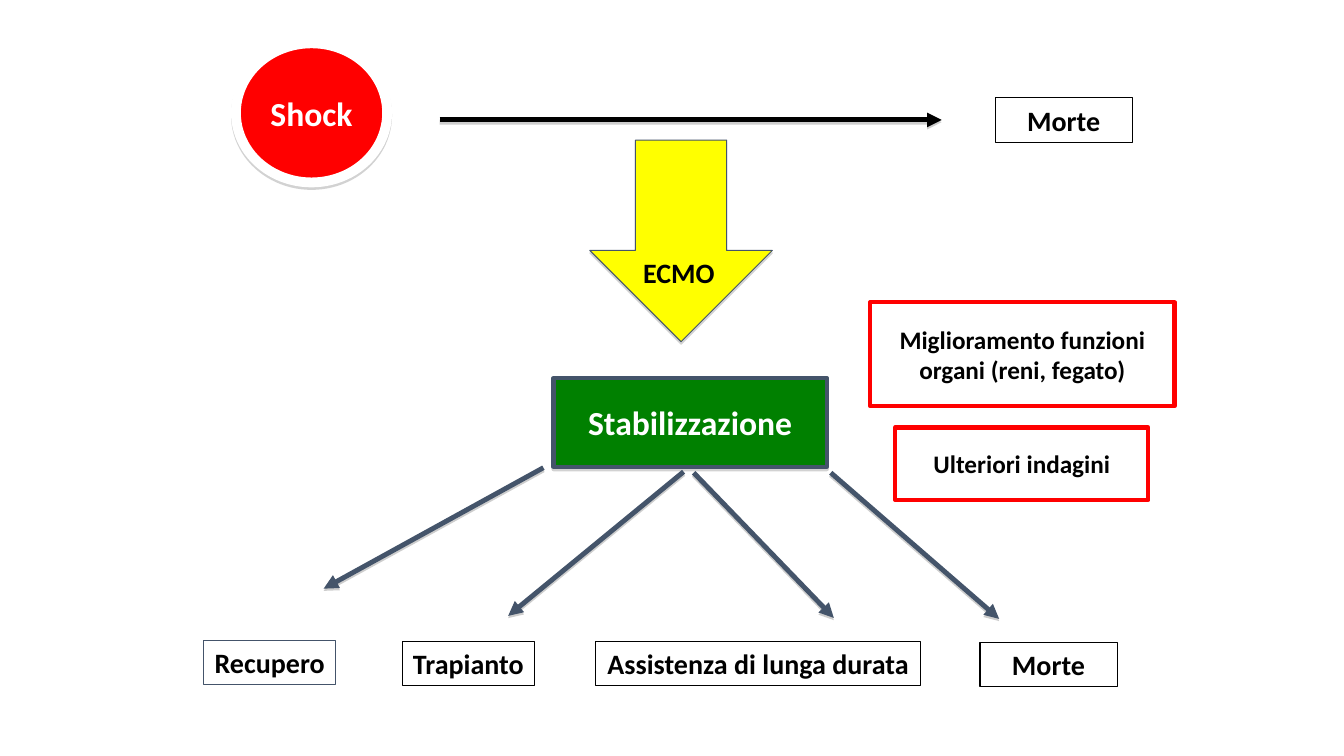
import pptx
import pptx.util
import pptx.dml.color
import pptx.enum.shapes
import pptx.enum.text
import pptx.oxml
import pptx.oxml.ns
from dataclasses import dataclass

PX = 9144
SHAPE = pptx.enum.shapes.MSO_SHAPE
ALIGN = pptx.enum.text.PP_ALIGN


@dataclass(frozen=True)
class Theme:
    font: str = "Calibri"
    black: str = "000000"
    white: str = "FFFFFF"
    red: str = "FF0000"
    yellow: str = "FFFF00"
    green: str = "008000"
    slate: str = "44546A"
    shadow: str = "808080"
    heading: int = 24
    label: int = 20
    note: int = 18
    hairline: float = 0.75
    border: float = 3
    arrow: float = 3.5
    halo: float = 7


THEME = Theme()


def rgb(value):
    return pptx.dml.color.RGBColor.from_string(value)


def px(*lengths):
    return [pptx.util.Emu(length * PX) for length in lengths]


def set_line(line, color, width):
    line.color.rgb = rgb(color)
    line.width = pptx.util.Pt(width)


def add_shadow(effects, distance, opacity):
    effects.append(pptx.oxml.parse_xml(
        f'<a:outerShdw {pptx.oxml.ns.nsdecls("a")} blurRad="0" '
        f'dist="{pptx.util.Pt(distance)}" dir="5400000" rotWithShape="0">'
        f'<a:srgbClr val="{THEME.shadow}"><a:alpha val="{opacity * 1000}"/></a:srgbClr>'
        '</a:outerShdw>'))


def write(shape, text, size, color=THEME.black, align=ALIGN.CENTER, wrap=True):
    frame = shape.text_frame
    frame.text = text
    frame.word_wrap = wrap
    frame.vertical_anchor = pptx.enum.text.MSO_ANCHOR.MIDDLE
    paragraph = frame.paragraphs[0]
    paragraph.alignment = align
    font = paragraph.runs[0].font
    font.name = THEME.font
    font.size = pptx.util.Pt(size)
    font.bold = True
    font.color.rgb = rgb(color)


def add_block(slide, kind, box, fill, line, width, shadow=False):
    block = slide.shapes.add_shape(kind, *px(*box))
    block.shadow.inherit = False
    if fill:
        block.fill.solid()
        block.fill.fore_color.rgb = rgb(fill)
    else:
        block.fill.background()
    set_line(block.line, line, width)
    if shadow:
        add_shadow(block.element.spPr.find(pptx.oxml.ns.qn("a:effectLst")), 1.8, 35)
    return block


def add_arrow(slide, start, end, color):
    arrow = slide.shapes.add_connector(
        pptx.enum.shapes.MSO_CONNECTOR.STRAIGHT, *px(*start, *end))
    set_line(arrow.line, color, THEME.arrow)
    properties = arrow.element.spPr
    line = properties.find(pptx.oxml.ns.qn("a:ln"))
    line.append(pptx.oxml.parse_xml(
        f'<a:tailEnd {pptx.oxml.ns.nsdecls("a")} type="triangle"/>'))
    effects = pptx.oxml.parse_xml(f'<a:effectLst {pptx.oxml.ns.nsdecls("a")}/>')
    properties.append(effects)
    add_shadow(effects, 1.6, 38)


def add_label(slide, text, box, line=THEME.black, wrap=False):
    label = add_block(slide, SHAPE.RECTANGLE, box, None, line, THEME.hairline)
    write(label, text, THEME.label, wrap=wrap)


def add_untreated_course(slide, box):
    left, top, width, height = box
    shock = add_block(slide, SHAPE.OVAL, (left, top, 150, height),
                      THEME.red, THEME.white, THEME.halo, shadow=True)
    write(shock, "Shock", THEME.heading, THEME.white)
    death_left = left + width - 136
    add_label(slide, "Morte", (death_left, top + 54, 136, 44))
    add_arrow(slide, (left + 202, top + 76), (death_left - 53, top + 76), THEME.black)


def add_treatment(slide, box):
    left, top, width, height = box
    add_block(slide, SHAPE.DOWN_ARROW, (left + 36, top, 181, 200),
              THEME.yellow, THEME.slate, THEME.hairline, shadow=True)
    ecmo = slide.shapes.add_textbox(*px(left + 79, top + 109, 99, 44))
    write(ecmo, "ECMO", THEME.label, align=ALIGN.LEFT)
    stabilization = add_block(slide, SHAPE.RECTANGLE, (left, top + height - 88, width, 88),
                              THEME.green, THEME.slate, THEME.border, shadow=True)
    write(stabilization, "Stabilizzazione", THEME.heading, THEME.white)


def add_benefits(slide, box):
    left, top, width, height = box
    benefits = (
        ("Miglioramento funzioni organi (reni, fegato)", (left, top, width, 103)),
        ("Ulteriori indagini", (left + 25, top + height - 72, width - 51, 72)),
    )
    for text, place in benefits:
        benefit = add_block(slide, SHAPE.RECTANGLE, place, THEME.white, THEME.red, THEME.border)
        write(benefit, text, THEME.note)


def add_outcomes(slide, box):
    left, top, width, height = box
    label_top = top + height - 46
    outcomes = (
        ("Recupero", 0, -1, 131, THEME.slate, (337, 0), (119, 120)),
        ("Trapianto", 197, 0, 131, THEME.black, (476, 4), (302, 147)),
        ("Assistenza di lunga durata", 389, 0, 322, THEME.black, (486, 5), (625, 149)),
        ("Morte", width - 136, 1, 136, THEME.black, (622, 5), (789, 150)),
    )
    for text, offset, drop, label_width, line, start, end in outcomes:
        add_label(slide, text, (left + offset, label_top + drop, label_width, 44), line)
        add_arrow(slide, (left + start[0], top + start[1]),
                  (left + end[0], top + end[1]), THEME.slate)


def main():
    deck = pptx.Presentation()
    deck.slide_width, deck.slide_height = px(1333, 750)
    slide = deck.slides.add_slide(deck.slide_layouts[6])
    slide.background.fill.solid()
    slide.background.fill.fore_color.rgb = rgb(THEME.white)
    add_untreated_course(slide, (234, 43, 889, 138))
    add_treatment(slide, (549, 139, 271, 324))
    add_benefits(slide, (863, 300, 302, 196))
    add_outcomes(slide, (202, 464, 906, 218))
    deck.save("out.pptx")


if __name__ == "__main__":
    main()
